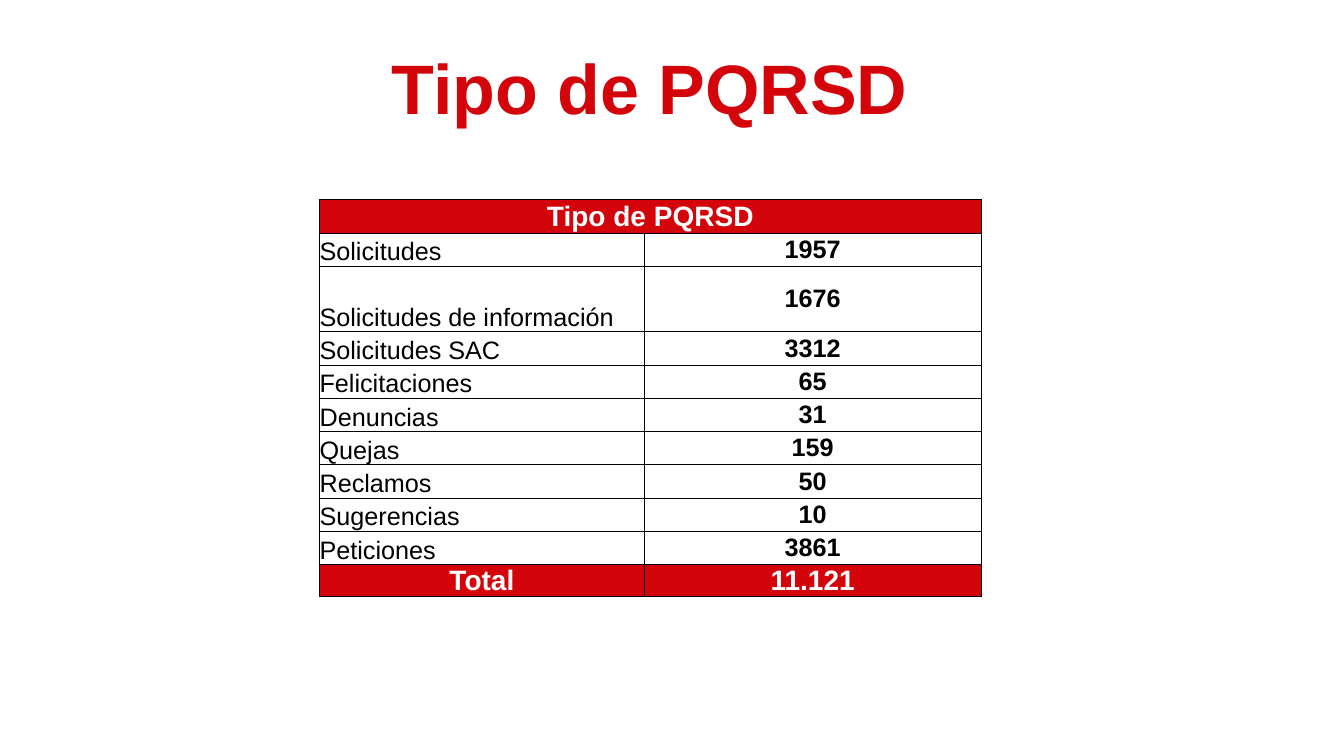
from dataclasses import dataclass

from pptx import Presentation
from pptx.dml.color import RGBColor
from pptx.enum.text import MSO_AUTO_SIZE as AutoSize, MSO_VERTICAL_ANCHOR as Anchor, PP_ALIGN as Align
from pptx.oxml import parse_xml
from pptx.oxml.ns import nsdecls
from pptx.slide import Slide
from pptx.table import _Cell as Cell
from pptx.text.text import _Paragraph as Paragraph
from pptx.util import Inches, Pt

RED = RGBColor(0xD4, 0x04, 0x0B)
WHITE = RGBColor(0xFF, 0xFF, 0xFF)
BLACK = RGBColor(0x00, 0x00, 0x00)
WIDTH, HEIGHT = Inches(13.33), Inches(7.5)
HEADING = "Tipo de PQRSD"
LABEL_SHARE, COUNT_SHARE = 24.16, 25.06
ROW_SHARE = 4.4


@dataclass(frozen=True)
class Style:
    size: int
    color: RGBColor
    bold: bool
    align: Align
    anchor: Anchor
    fill: RGBColor | None = None


@dataclass(frozen=True)
class Request:
    label: str
    count: str
    share: float = ROW_SHARE
    label_style: Style = Style(18, BLACK, False, Align.LEFT, Anchor.BOTTOM)
    count_style: Style = Style(18, BLACK, True, Align.CENTER, Anchor.MIDDLE)


TITLE = Style(50, RED, True, Align.CENTER, Anchor.MIDDLE)
BAND = Style(20, WHITE, True, Align.CENTER, Anchor.BOTTOM, RED)
REQUESTS = (
    Request(HEADING, "", label_style=BAND, count_style=BAND),
    Request("Solicitudes", "1957"),
    Request("Solicitudes de información", "1676", share=8.67),
    Request("Solicitudes SAC", "3312"),
    Request("Felicitaciones", "65"),
    Request("Denuncias", "31"),
    Request("Quejas", "159"),
    Request("Reclamos", "50"),
    Request("Sugerencias", "10"),
    Request("Peticiones", "3861"),
    Request("Total", "11.121", share=4.27, label_style=BAND, count_style=BAND),
)


def across(percent: float) -> int:
    """Return a percentage of the slide's width."""
    return round(WIDTH * percent / 100)


def down(percent: float) -> int:
    """Return a percentage of the slide's height."""
    return round(HEIGHT * percent / 100)


def format_paragraph(paragraph: Paragraph, style: Style) -> None:
    """Apply alignment and font to a paragraph."""
    paragraph.alignment = style.align
    font = paragraph.font
    font.name, font.size, font.bold = "Arial", Pt(style.size), style.bold
    font.color.rgb = style.color


def add_borders(cell: Cell) -> None:
    """Draw a thin black line on each side of a cell."""
    properties = cell._tc.get_or_add_tcPr()
    for position, side in enumerate(("lnL", "lnR", "lnT", "lnB")):
        border = parse_xml(
            f'<a:{side} {nsdecls("a")} w="{Pt(0.5)}"><a:solidFill>'
            f'<a:srgbClr val="{BLACK}"/></a:solidFill></a:{side}>'
        )
        properties.insert(position, border)


def fill_cell(cell: Cell, text: str, style: Style) -> None:
    """Write and format one table cell."""
    cell.text = text
    cell.margin_left = cell.margin_right = cell.margin_top = cell.margin_bottom = 0
    cell.vertical_anchor = style.anchor
    format_paragraph(cell.text_frame.paragraphs[0], style)
    if style.fill is None:
        cell.fill.background()
    else:
        cell.fill.solid()
        cell.fill.fore_color.rgb = style.fill
    add_borders(cell)


def draw_title(slide: Slide) -> None:
    """Place and format the slide title."""
    title = slide.shapes.title
    title.left, title.top = across(27.91), down(6.53)
    title.width, title.height = across(40.89), down(11.33)
    frame = title.text_frame
    frame.text = HEADING
    frame.word_wrap, frame.auto_size = True, AutoSize.NONE
    frame.vertical_anchor = TITLE.anchor
    format_paragraph(frame.paragraphs[0], TITLE)
    frame.paragraphs[0].line_spacing = 0.9


def draw_requests(slide: Slide) -> None:
    """Draw the table of requests by type."""
    table = slide.shapes.add_table(
        len(REQUESTS), 2, across(23.78), down(26.4),
        across(LABEL_SHARE + COUNT_SHARE), down(sum(request.share for request in REQUESTS)),
    ).table
    table.first_row = table.horz_banding = False
    for column, share in zip(table.columns, (LABEL_SHARE, COUNT_SHARE)):
        column.width = across(share)
    for index, request in enumerate(REQUESTS):
        table.rows[index].height = down(request.share)
        fill_cell(table.cell(index, 0), request.label, request.label_style)
        fill_cell(table.cell(index, 1), request.count, request.count_style)
    table.cell(0, 0).merge(table.cell(0, 1))


def main() -> None:
    """Build and save the presentation."""
    presentation = Presentation()
    presentation.slide_width, presentation.slide_height = WIDTH, HEIGHT
    slide = presentation.slides.add_slide(presentation.slide_layouts[5])
    draw_title(slide)
    draw_requests(slide)
    presentation.save("out.pptx")


if __name__ == "__main__":
    main()
